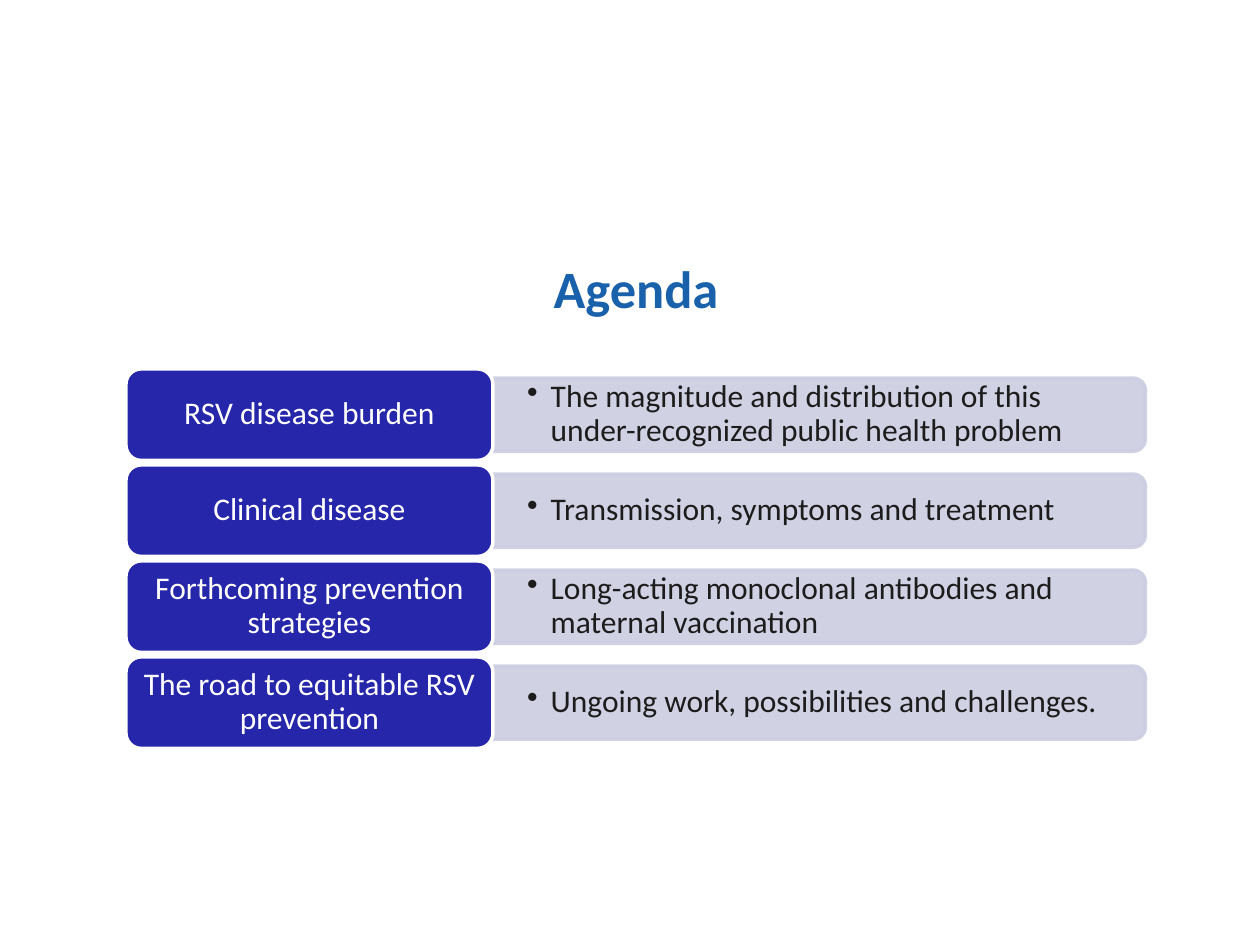
from lxml import etree
from pptx import Presentation
from pptx.dml.color import RGBColor
from pptx.enum import shapes, text
from pptx.oxml.ns import qn
from pptx.util import Pt

BLUE = RGBColor(0x19, 0x61, 0xAB)
NAVY = RGBColor(0x25, 0x26, 0xA9)
LILAC = RGBColor(0xCD, 0xCD, 0xE2)
INK = RGBColor(0x1C, 0x1C, 0x1C)
WHITE = RGBColor(0xFF, 0xFF, 0xFF)

LEFT, TOP = 72, 210.8
LABEL_W, LABEL_H, PITCH = 209.7, 52.3, 54.85
BAR_W, BAR_H = 372.8, 41.8
BAR_X = LEFT + LABEL_W

ROWS = [
    ("RSV disease burden",
     "The magnitude and distribution of this under-recognized public health problem"),
    ("Clinical disease", "Transmission, symptoms and treatment"),
    ("Forthcoming prevention strategies",
     "Long-acting monoclonal antibodies and maternal vaccination"),
    ("The road to equitable RSV prevention",
     "Ungoing work, possibilities and challenges."),
]


def paint(shape, fill, line):
    shape.shadow.inherit = False
    shape.fill.solid()
    shape.fill.fore_color.rgb = fill
    shape.line.color.rgb = line
    shape.line.width = Pt(2)


def write(shape, words, color, side, edge):
    """Set 18 pt text, centred vertically, with side and edge insets."""
    frame = shape.text_frame
    frame.word_wrap = True
    frame.vertical_anchor = text.MSO_ANCHOR.MIDDLE
    frame.margin_left = frame.margin_right = Pt(side)
    frame.margin_top = frame.margin_bottom = Pt(edge)
    frame.text = words
    para = frame.paragraphs[0]
    para.line_spacing = 0.9
    font = para.runs[0].font
    font.name, font.size = "Calibri", Pt(18)
    font.color.rgb = color
    return para


deck = Presentation()
deck.slide_width, deck.slide_height = Pt(720), Pt(540)
slide = deck.slides.add_slide(deck.slide_layouts[0])
sub = slide.placeholders[1].element
sub.getparent().remove(sub)

title = slide.shapes.title
title.left, title.top, title.width, title.height = Pt(72), Pt(142.5), Pt(583), Pt(52.5)
title.text_frame.text = "Agenda"
title.text_frame.vertical_anchor = text.MSO_ANCHOR.TOP
head = title.text_frame.paragraphs[0]
head.alignment = text.PP_ALIGN.CENTER
font = head.runs[0].font
font.name, font.size, font.bold = "Calibri", Pt(30), True
font.color.rgb = BLUE

for row, (topic, detail) in enumerate(ROWS):
    top = TOP + row * PITCH
    mid = top + LABEL_H / 2

    # The bar is drawn upright and turned, so its round corners face right.
    bar = slide.shapes.add_shape(
        shapes.MSO_SHAPE.ROUND_2_SAME_RECTANGLE,
        Pt(BAR_X + BAR_W / 2 - BAR_H / 2), Pt(mid - BAR_W / 2), Pt(BAR_H), Pt(BAR_W))
    bar.rotation = 90
    paint(bar, LILAC, LILAC)
    for tint in bar.element.spPr.iter(qn("a:srgbClr")):
        etree.SubElement(tint, qn("a:alpha"), val="90000")

    note = slide.shapes.add_textbox(
        Pt(BAR_X), Pt(mid - BAR_H / 2), Pt(BAR_W - 2), Pt(BAR_H))
    para = write(note, detail, INK, 19.5, 0)
    props = para._p.get_or_add_pPr()
    props.set("marL", str(Pt(13.5)))
    props.set("indent", str(-Pt(13.5)))
    etree.SubElement(props, qn("a:buChar"), char="•")

    label = slide.shapes.add_shape(
        shapes.MSO_SHAPE.ROUNDED_RECTANGLE,
        Pt(LEFT), Pt(top), Pt(LABEL_W), Pt(LABEL_H))
    paint(label, NAVY, WHITE)
    write(label, topic, WHITE, 5, 3).alignment = text.PP_ALIGN.CENTER

deck.save("out.pptx")
